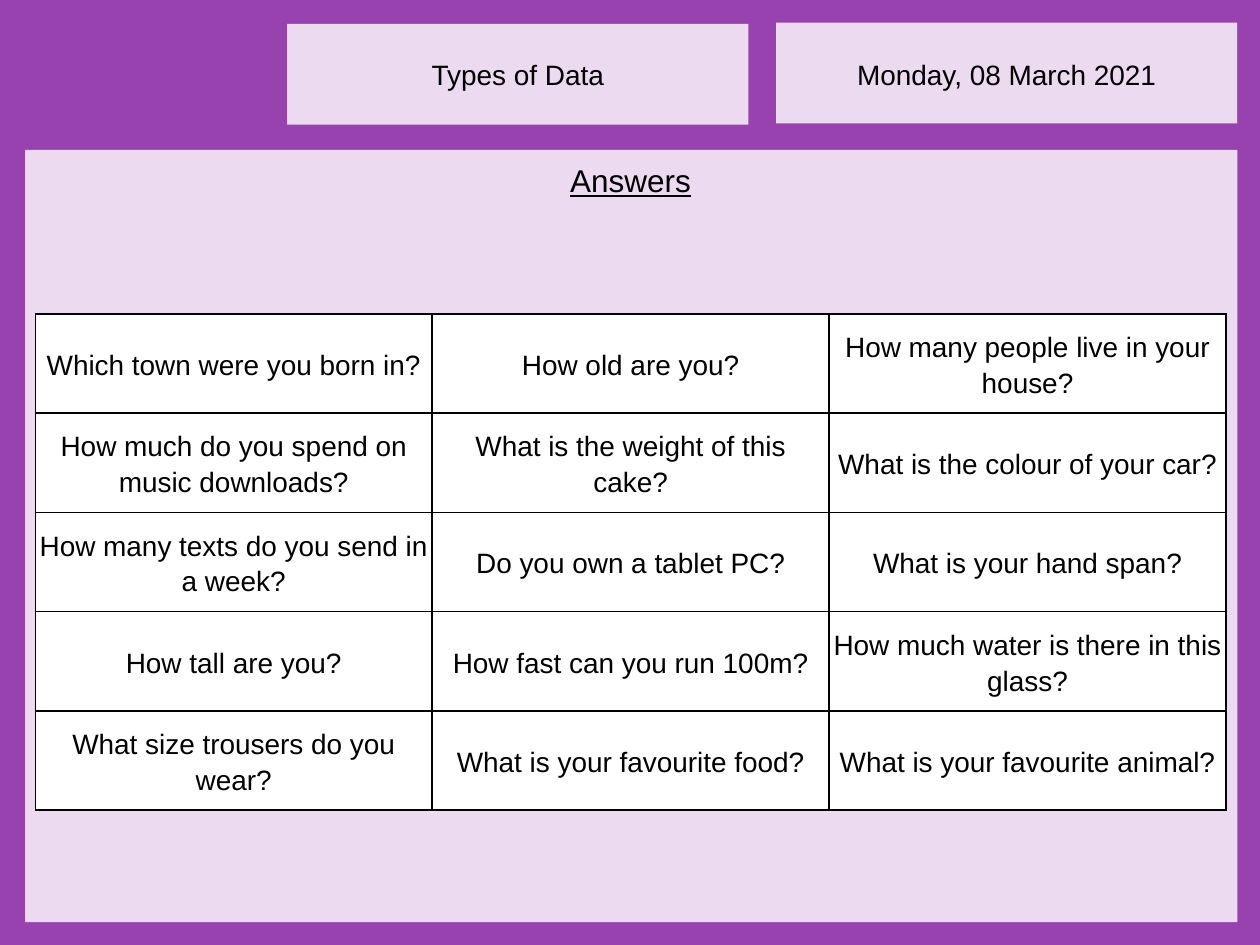
from dataclasses import dataclass

from lxml import etree
from pptx import Presentation, util as u
from pptx.dml.color import RGBColor
from pptx.enum import shapes, text
from pptx.oxml import ns

COLUMNS, ROWS = 1000, 750
CELL = u.Inches(0.01)


@dataclass(frozen=True)
class Theme:
    """Colours, font and type sizes of the lesson."""
    frame: str = "9842B0"
    panel: str = "ECDAF1"
    card: str = "FFFFFF"
    ink: str = "000000"
    font: str = "Arial"
    body: int = 16
    heading: int = 18
    rule: int = 1


@dataclass(frozen=True)
class Box:
    """An area in columns and rows of the slide grid."""
    left: int
    top: int
    width: int
    height: int

    def inner(self, left, top, width, height):
        """Return a box placed relative to this one."""
        return Box(self.left + left, self.top + top, width, height)

    def emu(self):
        """Return the four lengths for python-pptx."""
        return [CELL * n for n in (self.left, self.top, self.width, self.height)]


THEME = Theme()
QUESTIONS = [
    ["Which town were you born in?", "How old are you?",
     "How many people live in your house?"],
    ["How much do you spend on music downloads?",
     "What is the weight of this cake?", "What is the colour of your car?"],
    ["How many texts do you send in a week?", "Do you own a tablet PC?",
     "What is your hand span?"],
    ["How tall are you?", "How fast can you run 100m?",
     "How much water is there in this glass?"],
    ["What size trousers do you wear?", "What is your favourite food?",
     "What is your favourite animal?"],
]


def style_line(line, wording, size, underline=None):
    """Write one centred paragraph in the theme font."""
    line.text = wording
    line.alignment = text.PP_ALIGN.CENTER
    line.font.name = THEME.font
    line.font.size = u.Pt(size)
    line.font.underline = underline
    line.font.color.rgb = RGBColor.from_string(THEME.ink)


def add_panel(slide, box, colour):
    """Fill a plain rectangle."""
    panel = slide.shapes.add_shape(shapes.MSO_SHAPE.RECTANGLE, *box.emu())
    panel.shadow.inherit = False
    panel.fill.solid()
    panel.fill.fore_color.rgb = RGBColor.from_string(colour)
    panel.line.fill.background()


def add_label(slide, box, wording, size, underline=None):
    """Place a wrapped single-line label."""
    frame = slide.shapes.add_textbox(*box.emu()).text_frame
    frame.word_wrap = True
    style_line(frame.paragraphs[0], wording, size, underline)


def add_banner(slide, box, wording, drop):
    """Draw a header panel with its label dropped below its top edge."""
    add_panel(slide, box, THEME.panel)
    add_label(slide, box.inner(0, drop, box.width, 37), wording, THEME.body)


def outline_cell(cell):
    """Rule all four sides of a cell."""
    properties = cell._tc.get_or_add_tcPr()
    for position, side in enumerate(("lnL", "lnR", "lnT", "lnB")):
        rule = etree.Element(ns.qn(f"a:{side}"), w=str(u.Pt(THEME.rule)))
        fill = etree.SubElement(rule, ns.qn("a:solidFill"))
        etree.SubElement(fill, ns.qn("a:srgbClr"), val=THEME.ink)
        properties.insert(position, rule)


def fill_cell(cell, question):
    """Set one question in a ruled white cell."""
    cell.fill.solid()
    cell.fill.fore_color.rgb = RGBColor.from_string(THEME.card)
    cell.vertical_anchor = text.MSO_ANCHOR.MIDDLE
    cell.margin_left = cell.margin_right = u.Inches(0.03)
    cell.margin_top = cell.margin_bottom = u.Inches(0.01)
    line = cell.text_frame.paragraphs[0]
    style_line(line, question, THEME.body)
    line.line_spacing = 1.15
    line.space_after = u.Pt(10)
    outline_cell(cell)


def add_questions(slide, box):
    """Divide the box evenly into a table of questions."""
    size = len(QUESTIONS), len(QUESTIONS[0])
    table = slide.shapes.add_table(*size, *box.emu()).table
    table.first_row = table.horz_banding = False
    for row, questions in enumerate(QUESTIONS):
        for column, question in enumerate(questions):
            fill_cell(table.cell(row, column), question)


def add_answers(slide, box):
    """Draw the main panel with its heading and questions."""
    add_panel(slide, box, THEME.panel)
    add_questions(slide, box.inner(8, 130, 945, 394))
    add_label(slide, box.inner(8, 4, 945, 71), "Answers", THEME.heading, True)


def main():
    """Build the lesson slide."""
    deck = Presentation()
    deck.slide_width, deck.slide_height = CELL * COLUMNS, CELL * ROWS
    slide = deck.slides.add_slide(deck.slide_layouts[6])
    add_panel(slide, Box(0, 0, COLUMNS, ROWS), THEME.frame)
    add_banner(slide, Box(616, 18, 366, 80), "Monday, 08 March 2021", 23)
    add_banner(slide, Box(228, 19, 366, 80), "Types of Data", 22)
    add_answers(slide, Box(20, 119, 962, 613))
    deck.save("out.pptx")


if __name__ == "__main__":
    main()
